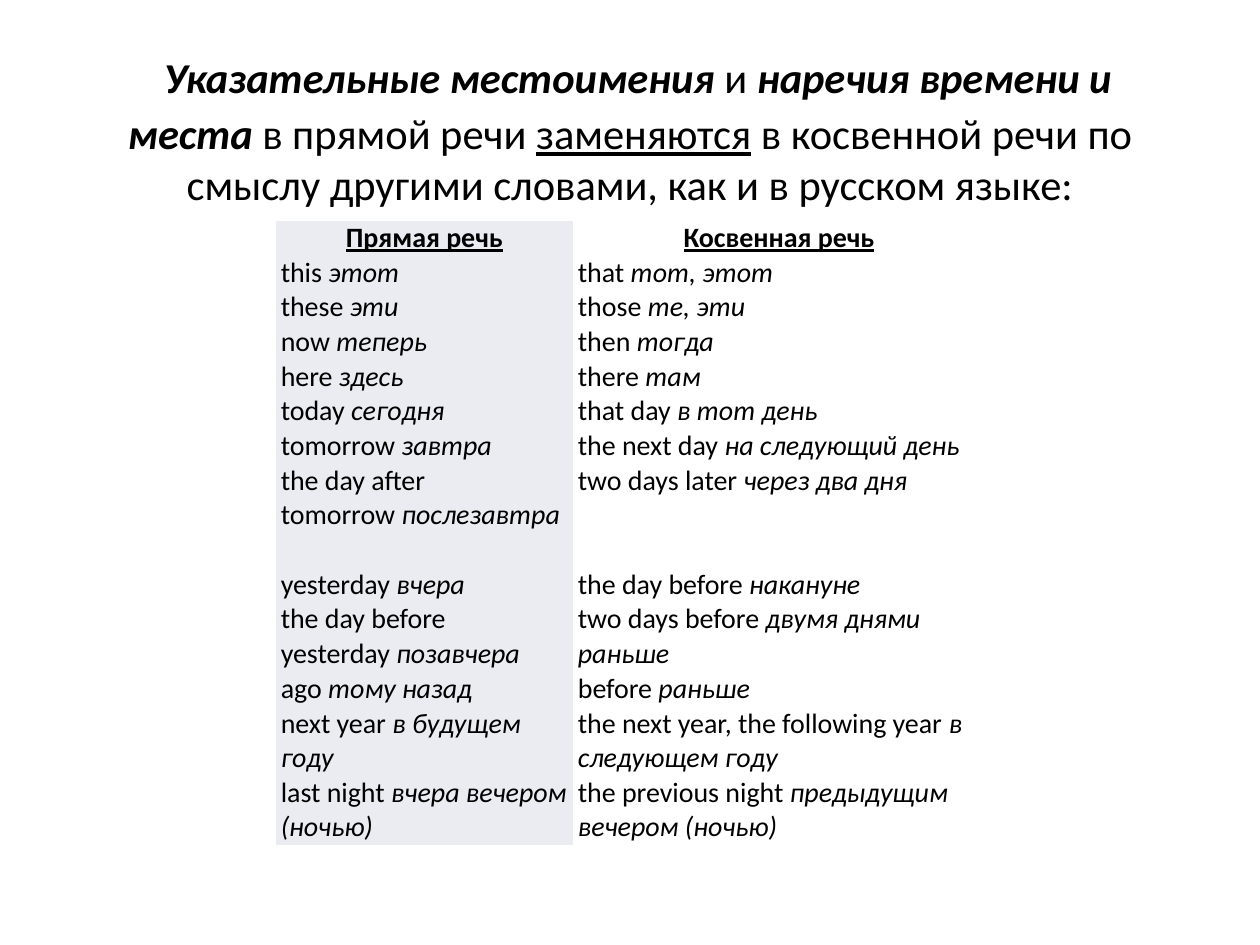
from typing import NamedTuple

from pptx import Presentation
from pptx.dml.color import RGBColor
from pptx.enum.text import MSO_ANCHOR as Anchor, PP_ALIGN as Align
from pptx.oxml.ns import qn
from pptx.util import Cm, Pt

FONT = "Calibri"
BLACK, WHITE, PALE = "000000", "FFFFFF", "EAECF2"
NBSP = chr(160)
NO_STYLE_NO_GRID = "{2D5ABB26-0587-4C30-8999-92F81FD0307C}"
TITLE_SIZE, CELL_SIZE = 24.3, 16
LINE_HEIGHT = 0.7
COLUMN_WIDTHS = (5.99, 8.31)
COLUMN_FILLS = (PALE, WHITE)


class Phrase(NamedTuple):
    english: str
    russian: str


class Pair(NamedTuple):
    direct: Phrase
    reported: Phrase
    lines: int = 1


HEADINGS = ("Прямая речь", "Косвенная речь")
PAIRS = (
    Pair(Phrase("this", "этот"), Phrase("that", "тот, этот")),
    Pair(Phrase("these", "эти"), Phrase("those", "те, эти")),
    Pair(Phrase("now", "теперь"), Phrase("then", "тогда")),
    Pair(Phrase("here", "здесь"), Phrase("there", "там")),
    Pair(Phrase("today", "сегодня"), Phrase("that day", "в тот день")),
    Pair(Phrase("tomorrow", "завтра"), Phrase("the next day", "на следующий день")),
    Pair(Phrase("the day after tomorrow", "послезавтра"),
         Phrase("two days later", "через два дня"), 3),
    Pair(Phrase("yesterday", "вчера"), Phrase("the day before", "накануне")),
    Pair(Phrase("the day before yesterday", "позавчера"),
         Phrase("two days before", "двумя днями раньше"), 2),
    Pair(Phrase("ago", "тому назад"), Phrase("before", "раньше")),
    Pair(Phrase("next year", "в будущем году"),
         Phrase("the next year, the following year", "в следующем году"), 2),
    Pair(Phrase("last night", "вчера вечером (ночью)"),
         Phrase("the previous night", "предыдущим вечером (ночью)"), 2),
)


def color(hex_value: str) -> RGBColor:
    return RGBColor.from_string(hex_value)


def add_text(paragraph, text: str, *, size: float, bold: bool = False,
             italic: bool = False, underline: bool = False) -> None:
    run = paragraph.add_run()
    run.text = text
    font = run.font
    font.name, font.size = FONT, Pt(size)
    font.bold, font.italic, font.underline = bold, italic, underline
    font.color.rgb = color(BLACK)


def add_title(slide) -> None:
    shape = slide.shapes.add_textbox(Cm(1.27), Cm(0.76), Cm(22.86), Cm(3.18))
    frame = shape.text_frame
    frame.word_wrap = True
    frame.vertical_anchor = Anchor.MIDDLE
    paragraph = frame.paragraphs[0]
    paragraph.alignment = Align.CENTER
    strong = {"bold": True, "italic": True}
    add_text(paragraph, NBSP, size=39.6)
    for text, style in (
        ("Указательные местоимения", strong),
        (f"{NBSP}и{NBSP}", {}),
        ("наречия времени и места", strong),
        (f"{NBSP}в прямой речи{NBSP}", {}),
        ("заменяются", {"underline": True}),
        (f"{NBSP}в косвенной речи по смыслу другими словами, "
         "как и в русском языке:", {}),
    ):
        add_text(paragraph, text, size=TITLE_SIZE, **style)


def prepare_cell(cell, fill: str):
    """Style the cell and return its paragraph."""
    cell.fill.solid()
    cell.fill.fore_color.rgb = color(fill)
    cell.margin_left = cell.margin_right = Cm(0.1)
    cell.margin_top = cell.margin_bottom = 0
    cell.vertical_anchor = Anchor.TOP
    return cell.text_frame.paragraphs[0]


def add_word_table(slide) -> None:
    line_counts = [1] + [pair.lines for pair in PAIRS]
    table = slide.shapes.add_table(
        len(line_counts), len(COLUMN_WIDTHS), Cm(5.56), Cm(4.45),
        Cm(sum(COLUMN_WIDTHS)), Cm(LINE_HEIGHT * sum(line_counts))).table
    table._tbl.tblPr.find(qn("a:tableStyleId")).text = NO_STYLE_NO_GRID
    table.first_row = table.horz_banding = False
    for column, width in zip(table.columns, COLUMN_WIDTHS):
        column.width = Cm(width)
    for row, count in zip(table.rows, line_counts):
        row.height = Cm(LINE_HEIGHT * count)

    # Each column: a heading, then English words with Russian meanings
    for index, (heading, fill) in enumerate(zip(HEADINGS, COLUMN_FILLS)):
        paragraph = prepare_cell(table.cell(0, index), fill)
        paragraph.alignment = Align.CENTER
        add_text(paragraph, heading, size=CELL_SIZE, bold=True, underline=True)
        for row_index, pair in enumerate(PAIRS, start=1):
            phrase = pair[index]
            paragraph = prepare_cell(table.cell(row_index, index), fill)
            add_text(paragraph, phrase.english + NBSP, size=CELL_SIZE)
            add_text(paragraph, phrase.russian, size=CELL_SIZE, italic=True)


def main() -> None:
    presentation = Presentation()
    presentation.slide_width, presentation.slide_height = Cm(25.4), Cm(19.05)
    slide = presentation.slides.add_slide(presentation.slide_layouts[6])
    add_title(slide)
    add_word_table(slide)
    presentation.save("out.pptx")


if __name__ == "__main__":
    main()
